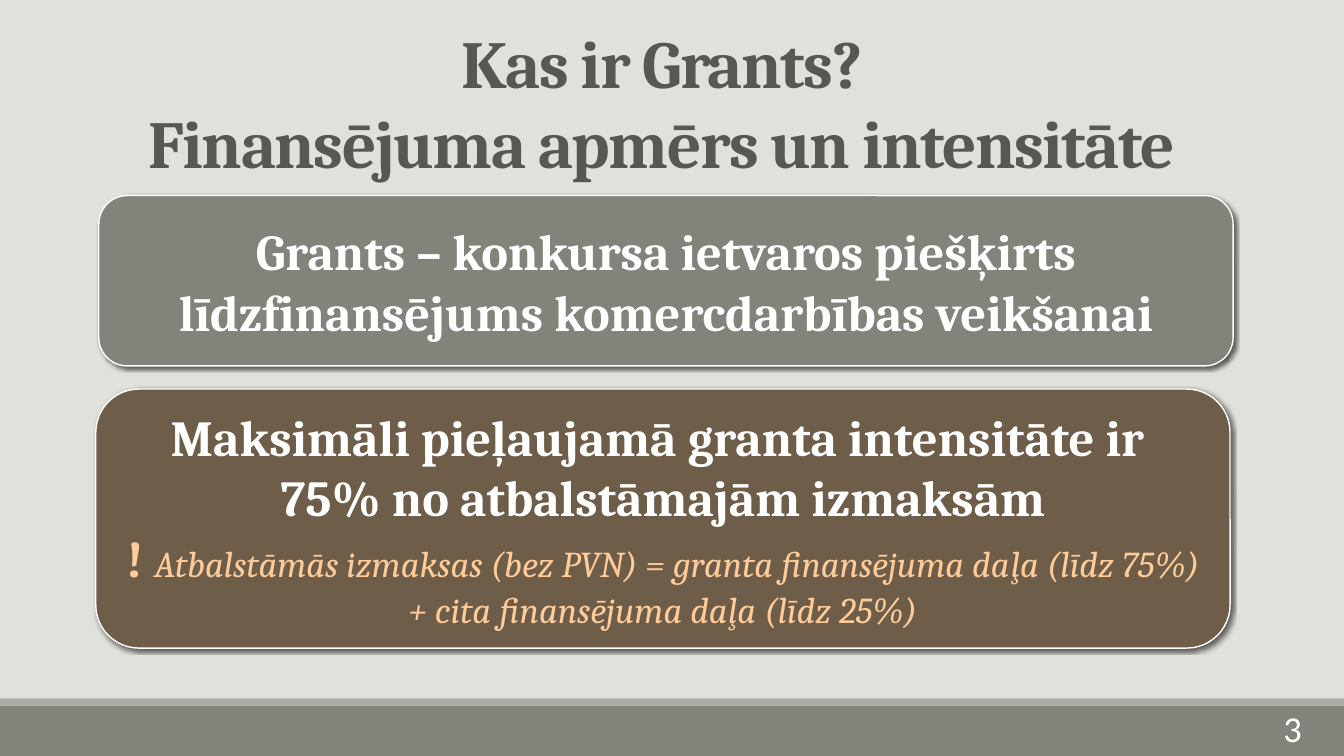
from lxml import etree
from pptx import Presentation
from pptx.dml.color import RGBColor
from pptx.enum.shapes import MSO_SHAPE as Shape
from pptx.enum.text import MSO_ANCHOR as Anchor, PP_ALIGN as Align
from pptx.oxml import parse_xml
from pptx.oxml.ns import nsdecls
from pptx.util import Inches, Pt

WIDTH, HEIGHT = 13.33, 7.5
BAND_TOP, STRIPE_HEIGHT = 7, 0.07
CARD_WIDTH = 11.25
COLORS = {
    "page": "E1E1DB",
    "band": "82847C",
    "stripe": "ACADA8",
    "title": "575853",
    "brown": "6E5D49",
    "white": "FFFFFF",
    "peach": "FFCC99",
}


def color(name):
    return RGBColor.from_string(COLORS[name])


def add_run(para, text, size, tint, font="Cambria", bold=False, italic=False):
    span = para.add_run()
    span.text = text
    span.font.name = font
    span.font.size = Pt(size)
    span.font.bold = bold
    span.font.italic = italic
    span.font.color.rgb = color(tint)
    return span


def set_frame(box, anchor=Anchor.MIDDLE):
    frame = box.text_frame
    frame.word_wrap = True
    frame.vertical_anchor = anchor
    return frame


def add_title(page):
    title = page.shapes.title
    title.left, title.top = Inches(0.5), Inches(0.16)
    title.width, title.height = Inches(12.13), Inches(1.72)
    para = set_frame(title, Anchor.TOP).paragraphs[0]
    para.alignment = Align.CENTER
    for index, line in enumerate(["Kas ir Grants?", "Finansējuma apmērs un intensitāte"]):
        if index:
            para.add_line_break()
        span = add_run(para, line, 48, "title", bold=True)
        span.font._element.set("spc", "-110")
    # The line break needs the size of the runs to keep the line pitch.
    for line_break in para._p.findall("{*}br"):
        etree.SubElement(line_break, line_break.tag[:-2] + "rPr", sz="4800")


def add_block(page, kind, left, top, width, height, fill):
    block = page.shapes.add_shape(
        kind, Inches(left), Inches(top), Inches(width), Inches(height))
    block.shadow.inherit = False
    block.fill.solid()
    block.fill.fore_color.rgb = color(fill)
    block.line.fill.background()
    return block


def add_shadow(block):
    """Replace the empty effect list with a soft shadow to the lower right."""
    properties = block._element.spPr
    properties.remove(properties.find("{*}effectLst"))
    properties.append(parse_xml(
        f'<a:effectLst {nsdecls("a")}>'
        f'<a:outerShdw blurRad="{Pt(3)}" dist="{Pt(2)}" dir="2700000" '
        'algn="tl" rotWithShape="0"><a:srgbClr val="000000">'
        '<a:alpha val="60000"/></a:srgbClr></a:outerShdw></a:effectLst>'))


def add_card(page, left, top, height, fill, paragraphs):
    """Draw a rounded card; each paragraph is a list of (text, run format)."""
    card = add_block(page, Shape.ROUNDED_RECTANGLE, left, top, CARD_WIDTH, height, fill)
    card.line.color.rgb = color("white")
    card.line.width = Pt(1)
    add_shadow(card)
    frame = set_frame(card)
    for index, runs in enumerate(paragraphs):
        para = frame.add_paragraph() if index else frame.paragraphs[0]
        para.alignment = Align.CENTER
        for text, style in runs:
            add_run(para, text, **style)


def add_page_number(page, number):
    box = page.shapes.add_textbox(Inches(11.58), Inches(7.02), Inches(1.43), Inches(0.4))
    para = set_frame(box).paragraphs[0]
    para.alignment = Align.RIGHT
    add_run(para, number, 26, "white", font="Calibri")


def main():
    deck = Presentation()
    deck.slide_width, deck.slide_height = Inches(WIDTH), Inches(HEIGHT)
    page = deck.slides.add_slide(deck.slide_layouts[5])
    page.background.fill.solid()
    page.background.fill.fore_color.rgb = color("page")

    add_block(page, Shape.RECTANGLE, 0, BAND_TOP, WIDTH, HEIGHT - BAND_TOP, "band")
    add_block(page, Shape.RECTANGLE, 0, BAND_TOP - STRIPE_HEIGHT, WIDTH, STRIPE_HEIGHT, "stripe")
    add_title(page)

    strong = {"size": 36, "tint": "white", "bold": True}
    mark = {**strong, "tint": "peach"}
    note = {"size": 26, "tint": "peach", "italic": True}
    add_card(page, 0.98, 1.94, 1.69, "band", [
        [("Grants – konkursa ietvaros piešķirts līdzfinansējums "
          "komercdarbības veikšanai", strong)],
    ])
    add_card(page, 0.95, 3.86, 2.57, "brown", [
        [("Maksimāli pieļaujamā granta intensitāte ir ", strong)],
        [("75% no atbalstāmajām izmaksām", strong)],
        [("! ", mark),
         ("Atbalstāmās izmaksas (bez PVN) = granta finansējuma daļa (līdz 75%) "
          "+ cita finansējuma daļa (līdz 25%)", note)],
    ])
    add_page_number(page, "3")
    deck.save("out.pptx")


if __name__ == "__main__":
    main()
